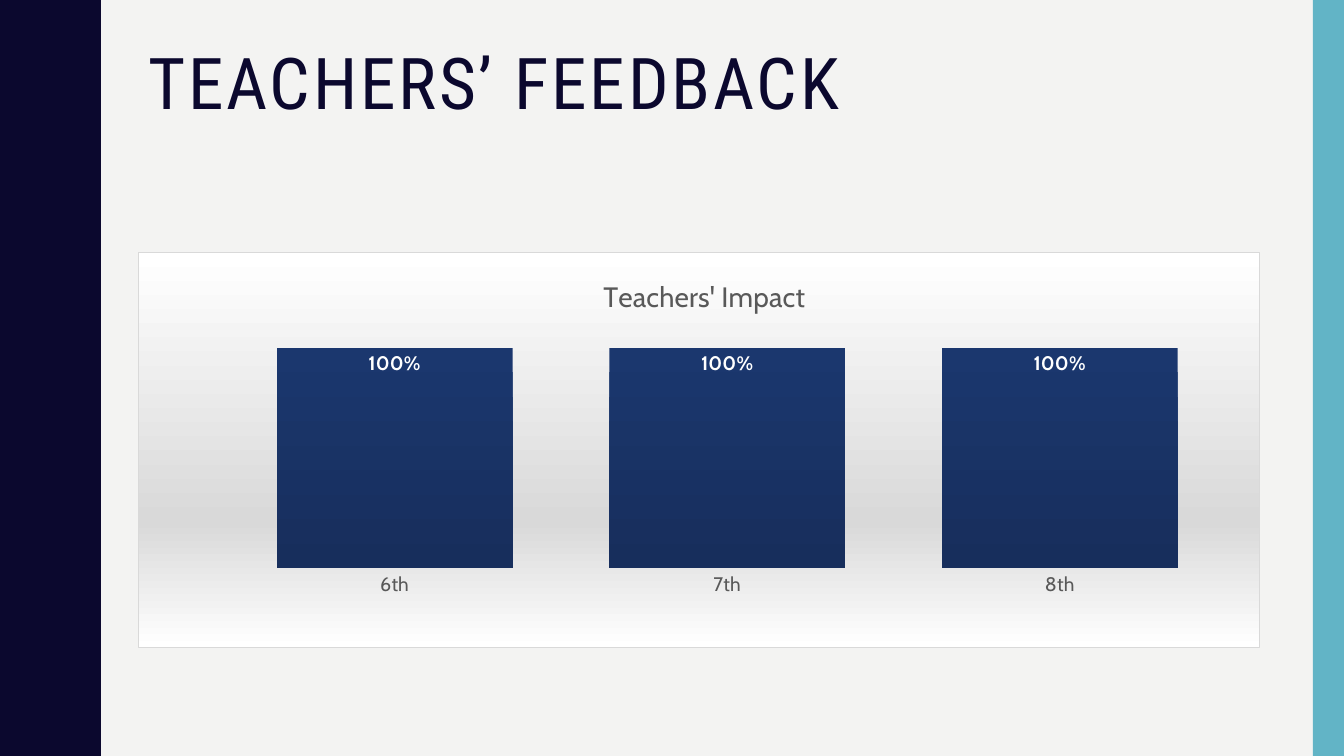
from lxml import etree
from pptx import Presentation
from pptx import util as u
from pptx.chart import data as chart_data
from pptx.dml import color
from pptx.enum import chart as chart_enum
from pptx.enum import shapes, text
from pptx.oxml import parse_xml
from pptx.oxml import ns

WIDTH, HEIGHT = u.Inches(13.33), u.Inches(7.5)
COLORS = {
    "background": "F3F3F2", "navy": "0B082E", "teal": "62B4C6", "grey": "595959",
    "silver": "D9D9D9", "white": "FFFFFF", "bar_top": "1B376E", "bar_bottom": "172E5C",
}
HALF_WAVE = [
    (0.78, 0), (0.78, 0.07), (0.79, 0.14), (0.8, 0.2), (0.81, 0.25),
    (0.83, 0.29), (0.85, 0.33), (0.87, 0.38), (0.89, 0.42), (0.91, 0.46),
    (0.93, 0.5), (0.95, 0.55), (0.96, 0.61), (0.97, 0.68), (0.97, 0.75),
]
WAVE_COUNT, WAVE_LENGTH = 5, 1.5


def rgb(name):
    return color.RGBColor.from_string(COLORS[name])


def area(left, top, width, height):
    return [round(share * size) for share, size in
            zip((left, top, width, height), (WIDTH, HEIGHT) * 2)]


def apply(target, values):
    for name, value in values.items():
        setattr(target, name, value)


def format_font(font, color_name, **values):
    apply(font, values)
    font.color.rgb = rgb(color_name)


def paint(shape, color_name):
    shape.shadow.inherit = False
    shape.fill.solid()
    shape.fill.fore_color.rgb = rgb(color_name)
    shape.line.fill.background()


def gradient(*stops):
    marks = "".join(
        f'<a:gs pos="{percent * 1000}"><a:srgbClr val="{COLORS[name]}"/></a:gs>'
        for percent, name in stops)
    return parse_xml(
        f'<a:gradFill {ns.nsdecls("a")} rotWithShape="1"><a:gsLst>{marks}</a:gsLst>'
        '<a:lin ang="5400000" scaled="0"/></a:gradFill>')


def manual_layout(**values):
    layout = etree.Element(ns.qn("c:layout"))
    manual = etree.SubElement(layout, ns.qn("c:manualLayout"))
    for name, value in values.items():
        etree.SubElement(manual, ns.qn(f"c:{name}")).set("val", str(value))
    return layout


def add_wave(slide):
    wave = HALF_WAVE + [(x, WAVE_LENGTH - y) for x, y in HALF_WAVE[-2::-1]]
    edge = [(x, y + WAVE_LENGTH * index) for index in range(WAVE_COUNT) for x, y in wave]
    builder = slide.shapes.build_freeform(0, 0, scale=u.Inches(1))
    builder.add_line_segments(edge + [(0, WAVE_LENGTH * WAVE_COUNT)], close=True)
    paint(builder.convert_to_shape(), "navy")


def add_band(slide, box, color_name):
    paint(slide.shapes.add_shape(shapes.MSO_SHAPE.RECTANGLE, *area(*box)), color_name)


def set_title(slide, box, words):
    title = slide.shapes.title
    apply(title, dict(zip(("left", "top", "width", "height"), area(*box))))
    apply(title.text_frame, {
        "text": words, "word_wrap": True, "auto_size": text.MSO_AUTO_SIZE.NONE,
        "vertical_anchor": text.MSO_ANCHOR.TOP})
    paragraph = title.text_frame.paragraphs[0]
    apply(paragraph, {"alignment": text.PP_ALIGN.LEFT, "line_spacing": 0.9})
    run = paragraph.runs[0]
    format_font(run.font, "navy", name="Roboto Condensed", size=u.Pt(51))
    run.font._element.set("spc", "200")


def add_impact_chart(slide, box, heading, grades, shares):
    values = chart_data.CategoryChartData(number_format="0%")
    values.categories = grades
    values.add_series("Series 1", shares)
    chart = slide.shapes.add_chart(
        chart_enum.XL_CHART_TYPE.COLUMN_CLUSTERED, *area(*box), values).chart
    apply(chart, {"has_legend": False, "has_title": True})
    format_font(chart.font, "grey", name="Cabin", size=u.Pt(10))
    style_heading(chart, heading)
    style_axes(chart)
    style_bars(chart.plots[0])
    style_chart_area(chart)


def style_heading(chart, heading):
    frame = chart.chart_title.text_frame
    frame.text = heading
    format_font(frame.paragraphs[0].runs[0].font, "grey",
                name="Cabin", size=u.Pt(20), bold=False)
    title = chart.chart_title._element
    for layout in title.findall(ns.qn("c:layout")):
        title.remove(layout)
    title.find(ns.qn("c:tx")).addnext(
        manual_layout(xMode="edge", yMode="edge", x=0.41, y=0.05))


def style_axes(chart):
    apply(chart.value_axis, {
        "visible": False, "has_major_gridlines": False,
        "minimum_scale": 0, "maximum_scale": 1.2})
    axis = chart.category_axis
    axis.major_tick_mark = chart_enum.XL_TICK_MARK.NONE
    axis.format.line.fill.background()
    format_font(axis.tick_labels.font, "grey", name="Cabin", size=u.Pt(14))


def style_bars(plot):
    apply(plot, {"gap_width": 41, "vary_by_categories": False, "has_data_labels": True})
    apply(plot.data_labels, {
        "show_value": True, "number_format": "0%", "number_format_is_linked": False,
        "position": chart_enum.XL_LABEL_POSITION.INSIDE_END})
    format_font(plot.data_labels.font, "white", name="Cabin", size=u.Pt(14), bold=True)
    properties = plot.series[0]._element.get_or_add_spPr()
    properties.insert(0, gradient((0, "bar_top"), (100, "bar_bottom")))


def style_chart_area(chart):
    chart_element = chart._chartSpace.find(ns.qn("c:chart"))
    plot_area = chart_element.find(ns.qn("c:plotArea"))
    for layout in plot_area.findall(ns.qn("c:layout")):
        plot_area.remove(layout)
    plot_area.insert(0, manual_layout(
        layoutTarget="inner", xMode="edge", yMode="edge",
        x=0.08, y=0.13, w=0.89, h=0.67))
    properties = parse_xml(
        f'<c:spPr {ns.nsdecls("c", "a")}><a:ln w="{u.Pt(0.75)}"><a:solidFill>'
        f'<a:srgbClr val="{COLORS["silver"]}"/></a:solidFill></a:ln></c:spPr>')
    properties.insert(0, gradient((0, "white"), (68, "silver"), (100, "white")))
    chart_element.addnext(properties)


def main():
    presentation = Presentation()
    apply(presentation, {"slide_width": WIDTH, "slide_height": HEIGHT})
    slide = presentation.slides.add_slide(presentation.slide_layouts[5])
    slide.background.fill.solid()
    slide.background.fill.fore_color.rgb = rgb("background")
    left, width = 1.37 / 13.33, 11.13 / 13.33
    band = 0.31 / 13.33
    add_wave(slide)
    add_band(slide, (1 - band, 0, band, 1), "teal")
    set_title(slide, (left, 0.42 / 7.5, width, 1.63 / 7.5), "TEACHERS’ FEEDBACK")
    add_impact_chart(slide, (left, 1 / 3, width, 3.93 / 7.5), "Teachers' Impact",
                     ("6th", "7th", "8th"), (1, 1, 1))
    presentation.save("out.pptx")


if __name__ == "__main__":
    main()
